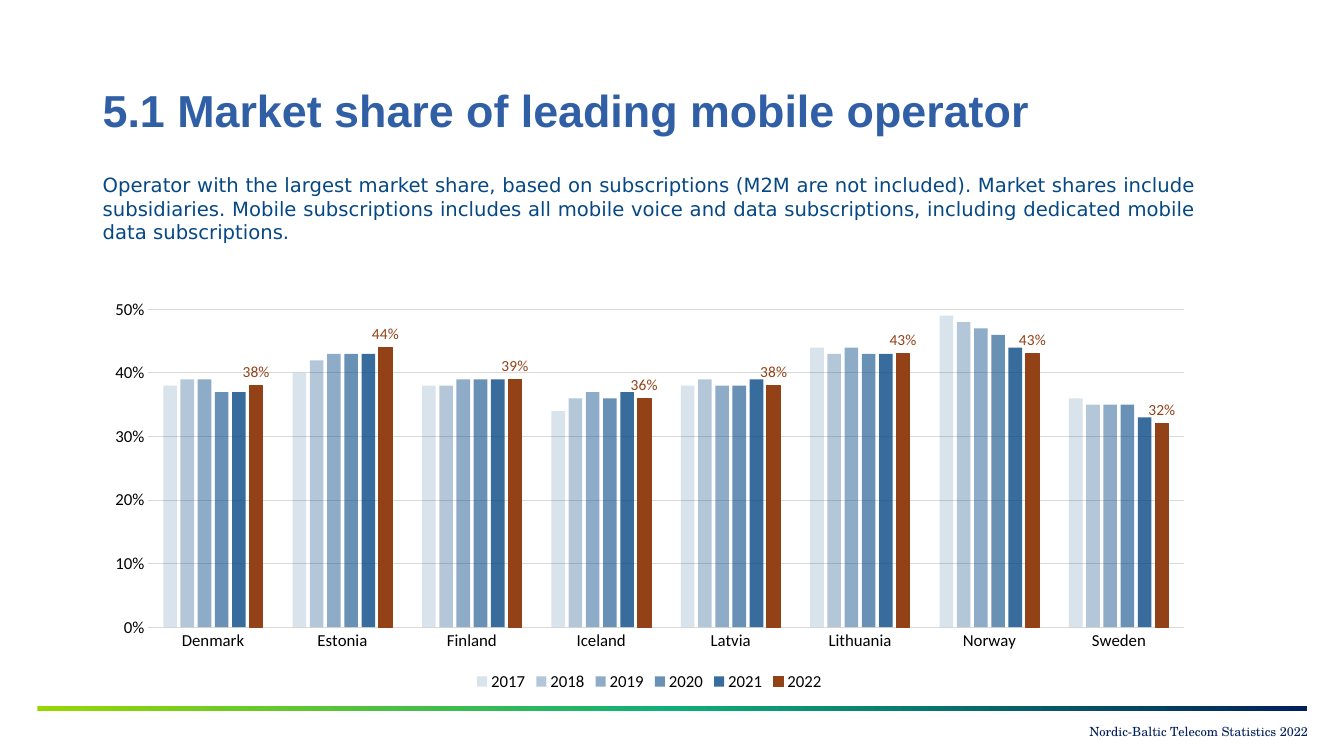
from copy import deepcopy

from lxml import etree
from pptx import Presentation
from pptx.chart.data import CategoryChartData
from pptx.dml.color import RGBColor
from pptx.enum.chart import XL_CHART_TYPE, XL_LABEL_POSITION, XL_LEGEND_POSITION, XL_TICK_MARK
from pptx.enum.shapes import MSO_SHAPE
from pptx.enum.text import MSO_ANCHOR, PP_ALIGN
from pptx.oxml.ns import qn
from pptx.util import Inches, Pt

RECTANGLE = MSO_SHAPE.RECTANGLE
CLUSTERED = XL_CHART_TYPE.COLUMN_CLUSTERED
LEGEND_BOTTOM = XL_LEGEND_POSITION.BOTTOM
OUTSIDE_END = XL_LABEL_POSITION.OUTSIDE_END
NO_TICK = XL_TICK_MARK.NONE
TOP, MIDDLE = MSO_ANCHOR.TOP, MSO_ANCHOR.MIDDLE
LEFT, RIGHT, JUSTIFY = PP_ALIGN.LEFT, PP_ALIGN.RIGHT, PP_ALIGN.JUSTIFY

BLACK = RGBColor(0x00, 0x00, 0x00)
GRID = RGBColor(0xD9, 0xD9, 0xD9)
TITLE_BLUE = RGBColor(0x30, 0x5F, 0xA6)
DEEP_BLUE = RGBColor(0x05, 0x48, 0x84)
RUST = RGBColor(0x93, 0x42, 0x18)
LIME = RGBColor(0x97, 0xD7, 0x00)
GREEN = RGBColor(0x0E, 0xAF, 0x78)
NAVY = RGBColor(0x00, 0x20, 0x5B)

COUNTRIES = ["Denmark", "Estonia", "Finland", "Iceland",
             "Latvia", "Lithuania", "Norway", "Sweden"]
SHARES = {
    "2017": [0.38, 0.40, 0.38, 0.34, 0.38, 0.44, 0.49, 0.36],
    "2018": [0.39, 0.42, 0.38, 0.36, 0.39, 0.43, 0.48, 0.35],
    "2019": [0.39, 0.43, 0.39, 0.37, 0.38, 0.44, 0.47, 0.35],
    "2020": [0.37, 0.43, 0.39, 0.36, 0.38, 0.43, 0.46, 0.35],
    "2021": [0.37, 0.43, 0.39, 0.37, 0.39, 0.43, 0.44, 0.33],
    "2022": [0.38, 0.44, 0.39, 0.36, 0.38, 0.43, 0.43, 0.32],
}
OPACITIES = [15, 30, 45, 60, 80]
PLOT_LAYOUT = {"x": 0.05, "y": 0.02, "w": 0.93, "h": 0.82}


def format_font(font, name, size, color, bold=False):
    font.name = name
    font.size = Pt(size)
    font.bold = bold
    font.color.rgb = color


def format_line(line, color, width=0.75):
    line.color.rgb = color
    line.width = Pt(width)


def set_opacity(fill_parent, percent):
    color = fill_parent.find(".//" + qn("a:srgbClr"))
    etree.SubElement(color, qn("a:alpha")).set("val", str(percent * 1000))


def set_plot_layout(chart):
    plot_area = chart.plots[0]._element.getparent()
    layout = plot_area.find(qn("c:layout"))
    if layout is None:
        layout = etree.Element(qn("c:layout"))
        plot_area.insert(0, layout)
    manual = etree.SubElement(layout, qn("c:manualLayout"))
    settings = {"layoutTarget": "inner", "xMode": "edge", "yMode": "edge", **PLOT_LAYOUT}
    for tag, value in settings.items():
        etree.SubElement(manual, qn("c:" + tag)).set("val", str(value))


class StatisticsSlide:
    heading_font = "Arial"
    body_font = "DejaVu Sans"
    footer_font = "TeX Gyre Schola"
    chart_font = "Calibri"

    def __init__(self, presentation):
        self.slide = presentation.slides.add_slide(presentation.slide_layouts[6])

    def gradient_bar(self, left, top, width, height, colors):
        shape = self.slide.shapes.add_shape(
            RECTANGLE, Inches(left), Inches(top), Inches(width), Inches(height))
        shape.shadow.inherit = False
        shape.line.fill.background()
        shape.fill.gradient()
        shape.fill.gradient_angle = 0
        first_stop = shape._element.spPr.find(".//" + qn("a:gs"))
        first_stop.addnext(deepcopy(first_stop))
        stops = shape.fill.gradient_stops
        for index, (stop, color) in enumerate(zip(stops, colors)):
            stop.position = index / (len(colors) - 1)
            stop.color.rgb = color

    def text(self, text, left, top, width, height, *, font, size, color, bold=False,
             align=LEFT, anchor=TOP, line_spacing=1.0, insets=(0.1, 0.05, 0.1, 0.05)):
        box = self.slide.shapes.add_textbox(
            Inches(left), Inches(top), Inches(width), Inches(height))
        frame = box.text_frame
        frame.word_wrap = True
        frame.vertical_anchor = anchor
        (frame.margin_left, frame.margin_top,
         frame.margin_right, frame.margin_bottom) = map(Inches, insets)
        paragraph = frame.paragraphs[0]
        paragraph.alignment = align
        paragraph.line_spacing = line_spacing
        run = paragraph.add_run()
        run.text = text
        format_font(run.font, font, size, color, bold)

    def share_chart(self, left, top, width, height):
        data = CategoryChartData(number_format="0%")
        data.categories = COUNTRIES
        for year, shares in SHARES.items():
            data.add_series(year, shares)
        chart = self.slide.shapes.add_chart(
            CLUSTERED, Inches(left), Inches(top), Inches(width), Inches(height), data).chart
        chart.has_title = False
        format_font(chart.font, self.chart_font, 10, BLACK)
        chart.has_legend = True
        chart.legend.position = LEGEND_BOTTOM
        chart.legend.include_in_layout = False
        format_font(chart.legend.font, self.chart_font, 12, BLACK)
        self.axes(chart)
        self.columns(chart.plots[0])
        set_plot_layout(chart)

    def axes(self, chart):
        for axis in (chart.category_axis, chart.value_axis):
            axis.major_tick_mark = NO_TICK
            axis.minor_tick_mark = NO_TICK
            format_font(axis.tick_labels.font, self.chart_font, 12, BLACK)
        format_line(chart.category_axis.format.line, GRID)
        value_axis = chart.value_axis
        value_axis.minimum_scale = 0
        value_axis.maximum_scale = 0.55
        value_axis.major_unit = 0.1
        value_axis.has_major_gridlines = True
        format_line(value_axis.major_gridlines.format.line, GRID)
        value_axis.format.line.fill.background()
        value_axis.tick_labels.number_format = "0%"
        value_axis.tick_labels.number_format_is_linked = False

    def columns(self, plot):
        plot.gap_width = 219
        plot.overlap = -27
        plot.vary_by_categories = False
        *earlier, latest = plot.series
        for series, opacity in zip(earlier, OPACITIES):
            series.format.fill.solid()
            series.format.fill.fore_color.rgb = DEEP_BLUE
            set_opacity(series._element, opacity)
        latest.format.fill.solid()
        latest.format.fill.fore_color.rgb = RUST
        format_line(latest.format.line, RUST)
        labels = latest.data_labels
        labels.show_value = True
        labels.position = OUTSIDE_END
        labels.number_format = "0%"
        labels.number_format_is_linked = False
        format_font(labels.font, self.chart_font, 11, RUST)


def main():
    presentation = Presentation()
    presentation.slide_width = Inches(13.33)
    presentation.slide_height = Inches(7.5)
    page = StatisticsSlide(presentation)
    page.gradient_bar(0.37, 7, 12.59, 0.05, [LIME, GREEN, NAVY])
    page.text("Nordic-Baltic Telecom Statistics 2022", 9.8, 7.13, 3.17, 0.3,
              font=page.footer_font, size=9, color=NAVY, align=RIGHT, anchor=MIDDLE,
              insets=(0.1, 0, 0, 0.05))
    page.text("5.1 Market share of leading mobile operator", 0.92, 0.4, 11.5, 1.45,
              font=page.heading_font, size=32, color=TITLE_BLUE, bold=True,
              anchor=MIDDLE, line_spacing=0.9)
    page.share_chart(0.92, 2.67, 11.04, 4.23)
    page.text("Operator with the largest market share, based on subscriptions "
              "(M2M are not included). Market shares include subsidiaries. Mobile "
              "subscriptions includes all mobile voice and data subscriptions, "
              "including dedicated mobile data subscriptions.", 0.92, 1.67, 11.04, 1,
              font=page.body_font, size=14, color=DEEP_BLUE, align=JUSTIFY)
    presentation.save("out.pptx")


if __name__ == "__main__":
    main()
